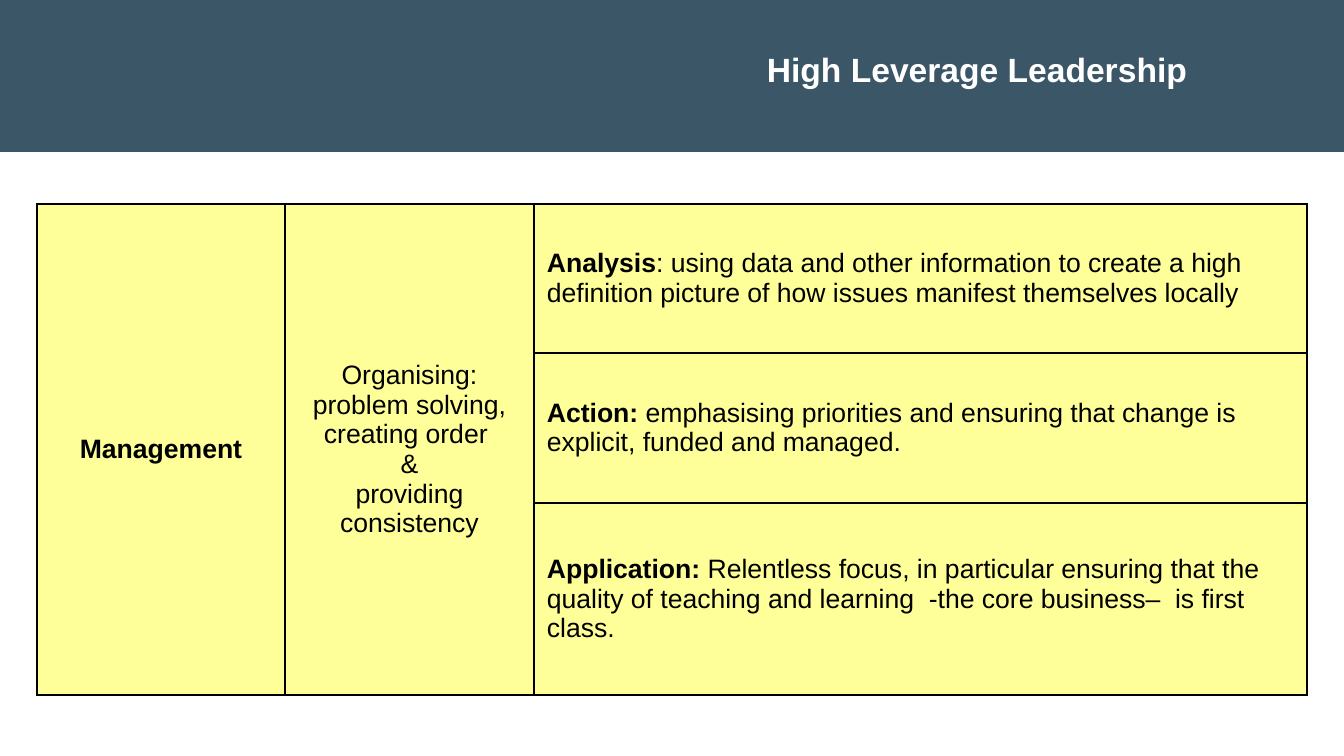
from lxml import etree
from pptx import Presentation, util as u
from pptx.dml.color import RGBColor
from pptx.enum import shapes, text
from pptx.oxml.ns import qn

TITLE = "High Leverage Leadership"
ROLE = "Management"
PURPOSE = ["Organising:", "problem solving, creating order ", "&", "providing consistency"]
PRACTICES = [
    ("Analysis", ": using data and other information to create a high definition "
                 "picture of how issues manifest themselves locally"),
    ("Action:", " emphasising priorities and ensuring that change is explicit, funded and managed."),
    ("Application:", " Relentless focus, in particular ensuring that the quality of teaching "
                     "and learning  -the core business–  is first class."),
]

SLATE = RGBColor(0x3A, 0x56, 0x67)
YELLOW = RGBColor(0xFF, 0xFF, 0x99)
BLACK = RGBColor(0, 0, 0)
WHITE = RGBColor(255, 255, 255)
FONT = "Arial"

SLIDE_SIZE = (1344, 756)
BANNER_HEIGHT = 152
TITLE_BOX = (757, 44, 587, 50)
TABLE_CORNER = (37, 204)
COLUMN_WIDTHS = [248, 249, 773]
ROW_HEIGHTS = [149, 150, 192]
CELL_INSETS = (13, 5)


def px(value):
    return u.Emu(round(value * 914400 / 100.8))


def style(font, size, color, bold=False):
    font.name, font.size, font.bold = FONT, u.Pt(size), bold
    font.color.rgb = color


def draw_borders(cell):
    properties = cell._tc.get_or_add_tcPr()
    for index, side in enumerate(("lnL", "lnR", "lnT", "lnB")):
        line = etree.Element(qn(f"a:{side}"), w=str(u.Pt(1)))
        fill = etree.SubElement(line, qn("a:solidFill"))
        etree.SubElement(fill, qn("a:srgbClr"), val=str(BLACK))
        properties.insert(index, line)


def write_centred(cell, lines, bold=False):
    frame = cell.text_frame
    frame.text = "\n".join(lines)
    for paragraph in frame.paragraphs:
        paragraph.alignment = text.PP_ALIGN.CENTER
        style(paragraph.font, 19, BLACK, bold)


presentation = Presentation()
presentation.slide_width, presentation.slide_height = map(px, SLIDE_SIZE)
slide = presentation.slides.add_slide(presentation.slide_layouts[6])

banner = slide.shapes.add_shape(
    shapes.MSO_SHAPE.RECTANGLE, 0, 0, px(SLIDE_SIZE[0]), px(BANNER_HEIGHT))
banner.shadow.inherit = False
banner.fill.solid()
banner.fill.fore_color.rgb = SLATE
banner.line.fill.background()

table = slide.shapes.add_table(
    len(ROW_HEIGHTS), len(COLUMN_WIDTHS), *map(px, TABLE_CORNER),
    px(sum(COLUMN_WIDTHS)), px(sum(ROW_HEIGHTS))).table
table.first_row = table.horz_banding = False
for column, width in zip(table.columns, COLUMN_WIDTHS):
    column.width = px(width)
for row, height in zip(table.rows, ROW_HEIGHTS):
    row.height = px(height)

for cell in table.iter_cells():
    cell.fill.solid()
    cell.fill.fore_color.rgb = YELLOW
    cell.vertical_anchor = text.MSO_ANCHOR.MIDDLE
    cell.margin_left = cell.margin_right = px(CELL_INSETS[0])
    cell.margin_top = cell.margin_bottom = px(CELL_INSETS[1])
    draw_borders(cell)

last_row = len(ROW_HEIGHTS) - 1
for column in (0, 1):
    table.cell(0, column).merge(table.cell(last_row, column))
write_centred(table.cell(0, 0), [ROLE], bold=True)
write_centred(table.cell(0, 1), PURPOSE)

for row, (heading, detail) in enumerate(PRACTICES):
    paragraph = table.cell(row, 2).text_frame.paragraphs[0]
    for words, bold in ((heading, True), (detail, False)):
        run = paragraph.add_run()
        run.text = words
        style(run.font, 19, BLACK, bold)

title = slide.shapes.add_textbox(*map(px, TITLE_BOX)).text_frame
title.word_wrap = True
title.text = TITLE
style(title.paragraphs[0].font, 24, WHITE, bold=True)

presentation.save("out.pptx")
